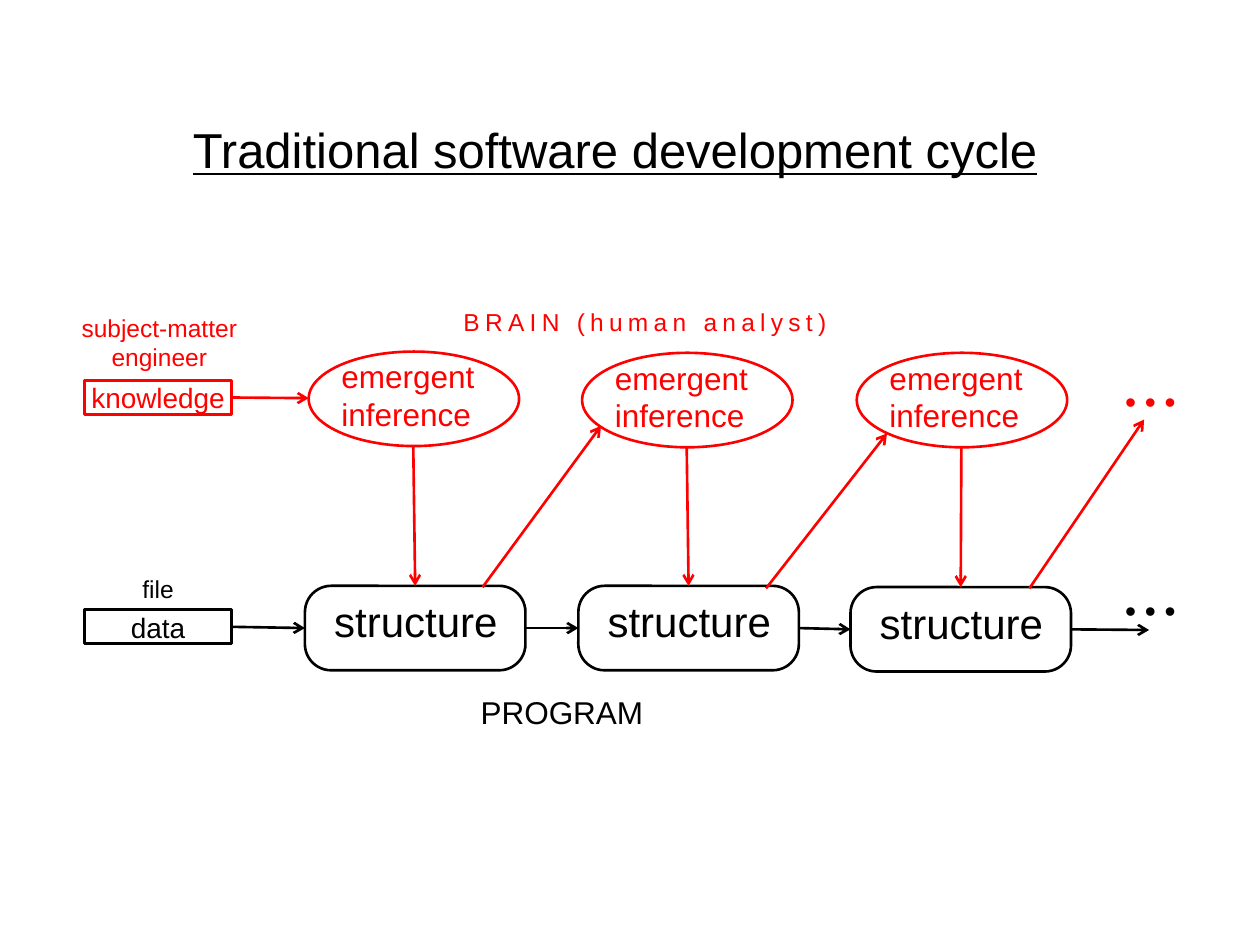
"""Build the slide on the traditional software development cycle."""
from lxml import etree
from pptx import Presentation
from pptx.dml.color import RGBColor
from pptx.enum.shapes import MSO_CONNECTOR, MSO_SHAPE
from pptx.enum.text import MSO_ANCHOR, PP_ALIGN
from pptx.oxml.ns import qn
from pptx.util import Inches, Pt

COLORS = {"program": "000000", "brain": "FF0000"}
FONT = "Arial"
LINE_WIDTH = Pt(1.5)
STRAIGHT = MSO_CONNECTOR.STRAIGHT
RECTANGLE, ROUNDED, ELLIPSE = MSO_SHAPE.RECTANGLE, MSO_SHAPE.ROUNDED_RECTANGLE, MSO_SHAPE.OVAL
MIDDLE, CENTER, LEFT = MSO_ANCHOR.MIDDLE, PP_ALIGN.CENTER, PP_ALIGN.LEFT
TOP_SIDE, LEFT_SIDE, RIGHT_SIDE = 0, 1, 3

presentation = Presentation()
presentation.slide_width, presentation.slide_height = Inches(10), Inches(7.5)
slide = presentation.slides.add_slide(presentation.slide_layouts[6])


def add_box(kind, box, color, text="", size=18, align=CENTER):
    """Add an outlined shape, or a text box when kind is None."""
    box = [Inches(value) for value in box]
    if kind is None:
        shape = slide.shapes.add_textbox(*box)
    else:
        shape = slide.shapes.add_shape(kind, *box)
        shape.shadow.inherit = False
        shape.fill.background()
        shape.line.color.rgb = RGBColor.from_string(COLORS[color])
        shape.line.width = LINE_WIDTH
    if text:
        frame = shape.text_frame
        frame.text = text
        frame.word_wrap = False
        frame.vertical_anchor = MIDDLE
        frame.margin_left = frame.margin_right = frame.margin_top = frame.margin_bottom = 0
        for paragraph in frame.paragraphs:
            paragraph.alignment = align
            paragraph.font.name = FONT
            paragraph.font.size = Pt(size)
            paragraph.font.color.rgb = RGBColor.from_string(COLORS[color])
    return shape


def add_arrow(start, end, color, source=None, target=None, target_side=LEFT_SIDE):
    """Add an arrow, joined to the right of source and a side of target."""
    arrow = slide.shapes.add_connector(STRAIGHT, *[Inches(value) for value in start + end])
    arrow.line.color.rgb = RGBColor.from_string(COLORS[color])
    arrow.line.width = LINE_WIDTH
    etree.SubElement(arrow.line._get_or_add_ln(), qn("a:tailEnd"), type="arrow")
    etree.SubElement(arrow._element.spPr, qn("a:effectLst"))
    if source is not None:
        arrow.begin_connect(source, RIGHT_SIDE)
    if target is not None:
        arrow.end_connect(target, target_side)


title = add_box(None, (1.17, 0.9, 7.42, 0.57), "program", "Traditional software development cycle", 28)
title.text_frame.paragraphs[0].font.underline = True

brain = add_box(None, (3.58, 2.43, 3.08, 0.24), "brain", "BRAIN (human analyst)", 14)
brain.text_frame.paragraphs[0].runs[0]._r.get_or_add_rPr().set("spc", "300")
add_box(None, (3.75, 5.5, 1.42, 0.3), "program", "PROGRAM")
add_box(None, (0.6, 2.48, 1.33, 0.47), "brain", "subject-matter\nengineer", 14)
add_box(None, (0.92, 4.55, 0.67, 0.24), "program", "file", 14)
for top, color in ((3.03, "brain"), (4.69, "program")):
    add_box(None, (8.92, top, 0.42, 0.3), color, "• • •")

knowledge = add_box(RECTANGLE, (0.67, 3.02, 1.17, 0.27), "brain", "knowledge", 16)
data = add_box(RECTANGLE, (0.67, 4.84, 1.17, 0.27), "program", "data", 16)
add_arrow((1.83, 3.15), (2.45, 3.16), "brain", source=knowledge)

stages = [
    ((2.45, 2.79), (2.42, 4.65), (3.83, 4.66), (4.77, 3.38)),
    ((4.62, 2.8), (4.59, 4.65), (6.08, 4.67), (7.04, 3.44)),
    ((6.8, 2.8), (6.75, 4.66), (8.17, 4.67), (9.08, 3.33)),
]
previous = data
for (inference_x, inference_y), (structure_x, structure_y), feedback_start, feedback_end in stages:
    add_box(ELLIPSE, (inference_x, inference_y, 1.67, 0.75), "brain")
    add_box(None, (inference_x + 0.26, inference_y + 0.04, 1.07, 0.61), "brain",
            "emergent\ninference", align=LEFT)
    structure = add_box(ROUNDED, (structure_x, structure_y, 1.75, 0.67), "program")
    structure.adjustments[0] = 0.31
    add_box(None, (structure_x + 0.17, structure_y + 0.08, 1.42, 0.4), "program", "structure", 24)
    add_arrow((inference_x + 0.83, inference_y + 0.75), (structure_x + 0.87, structure_y), "brain",
              target=structure, target_side=TOP_SIDE)
    add_arrow((structure_x - 0.42, 4.98), (structure_x, 4.98), "program", previous, structure)
    add_arrow(feedback_start, feedback_end, "brain")
    previous = structure
add_arrow((8.5, 4.99), (9.12, 5), "program", source=previous)

presentation.save("out.pptx")
